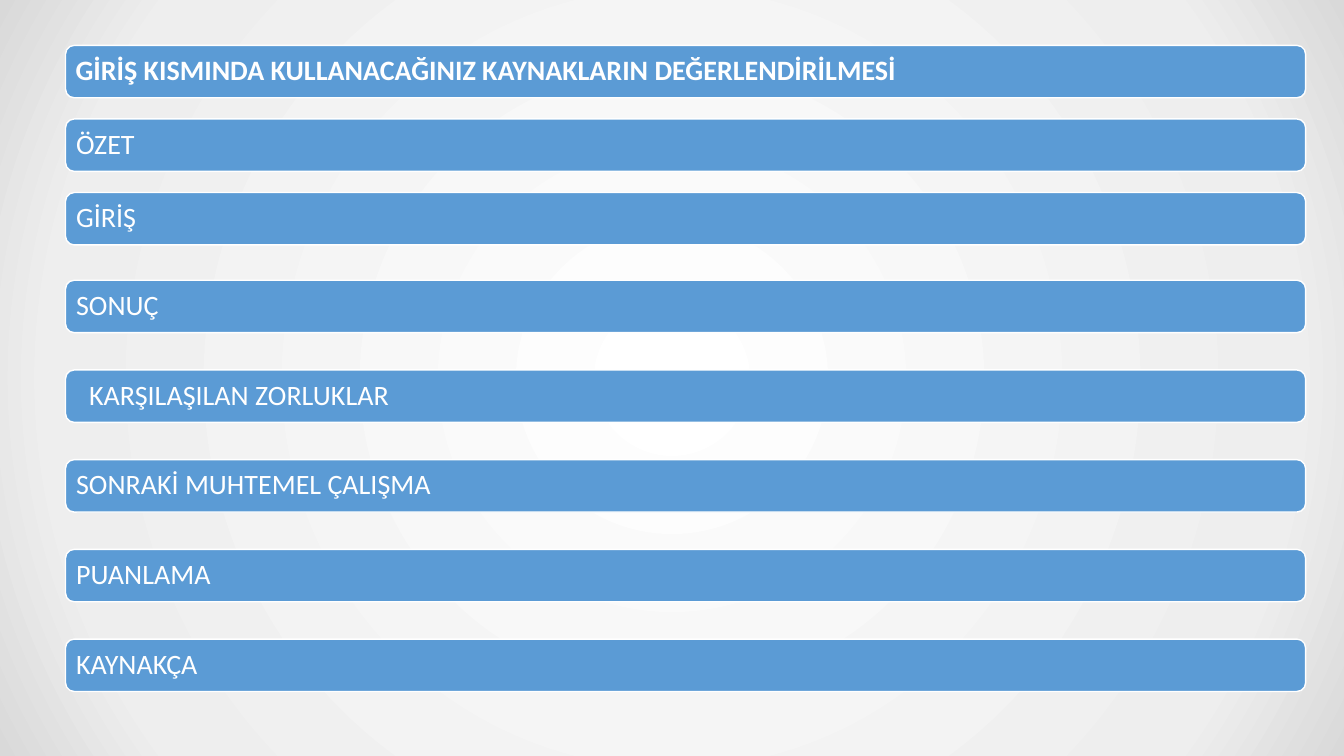
from pptx import Presentation
from pptx.dml.color import RGBColor
from pptx.enum.shapes import MSO_SHAPE as Shape
from pptx.enum.text import MSO_ANCHOR as Anchor, MSO_AUTO_SIZE as AutoSize, PP_ALIGN as Align
from pptx.oxml import parse_xml
from pptx.oxml.ns import nsdecls
from pptx.util import Inches, Pt

HEADING = "GİRİŞ KISMINDA KULLANACAĞINIZ KAYNAKLARIN DEĞERLENDİRİLMESİ"
OPENING_SECTIONS = ["ÖZET", "GİRİŞ"]
CLOSING_SECTIONS = ["SONUÇ", "KARŞILAŞILAN ZORLUKLAR", "SONRAKİ MUHTEMEL ÇALIŞMA",
                    "PUANLAMA", "KAYNAKÇA"]
INDENTED_SECTION = "KARŞILAŞILAN ZORLUKLAR"

TOP, OPENING_STEP = 0.45, 0.73
CLOSING_TOP, CLOSING_STEP = 2.78, 0.89


def colour(value):
    return RGBColor.from_string(value)


class SectionPage:
    FONT, SIZE = "Calibri", 20
    BLUE, WHITE = "5B9BD5", "FFFFFF"
    LEFT, WIDTH, HEIGHT = 0.65, 12.3, 0.52
    INSET, EDGE = 0.08, 0.02

    def __init__(self, deck):
        self.page = deck.slides.add_slide(deck.slide_layouts[5])

    def background(self, stops):
        """Fill the page with a circular gradient of (percent, colour) stops."""
        marks = "".join(f'<a:gs pos="{percent * 1000}"><a:srgbClr val="{value}"/></a:gs>'
                        for percent, value in stops)
        self.page.element.cSld.insert(0, parse_xml(
            f'<p:bg {nsdecls("p", "a")}><p:bgPr><a:gradFill rotWithShape="1">'
            f'<a:gsLst>{marks}</a:gsLst><a:path path="circle">'
            '<a:fillToRect l="50000" t="50000" r="50000" b="50000"/></a:path>'
            '</a:gradFill><a:effectLst/></p:bgPr></p:bg>'))

    def label(self, shape, text, bold=False, indent=0):
        frame = shape.text_frame
        frame.text = text
        frame.word_wrap = True
        frame.auto_size = AutoSize.NONE
        frame.vertical_anchor = Anchor.MIDDLE
        frame.margin_left = Inches(self.INSET + indent)
        frame.margin_top = frame.margin_right = frame.margin_bottom = Inches(self.INSET)
        para = frame.paragraphs[0]
        para.alignment = Align.LEFT
        para.line_spacing = 0.9
        font = para.runs[0].font
        font.name, font.size, font.bold = self.FONT, Pt(self.SIZE), bold
        font.color.rgb = colour(self.WHITE)

    def bar(self, top):
        bar = self.page.shapes.add_shape(Shape.ROUNDED_RECTANGLE, Inches(self.LEFT),
                                         Inches(top), Inches(self.WIDTH), Inches(self.HEIGHT))
        bar.shadow.inherit = False
        bar.fill.solid()
        bar.fill.fore_color.rgb = colour(self.BLUE)
        bar.line.color.rgb = colour(self.WHITE)
        bar.line.width = Pt(1)
        return bar

    def heading(self, text, top):
        """Lay the title placeholder over a bar."""
        bar = self.bar(top)
        title = self.page.shapes.title
        bar.element.addnext(title.element)
        title.left, title.top = Inches(self.LEFT + self.EDGE), Inches(top + self.EDGE)
        title.width = Inches(self.WIDTH - 2 * self.EDGE)
        title.height = Inches(self.HEIGHT - 2 * self.EDGE)
        self.label(title, text, bold=True)

    def section(self, text, top):
        self.label(self.bar(top), text, indent=0.13 if text == INDENTED_SECTION else 0)


def main():
    deck = Presentation()
    deck.slide_width, deck.slide_height = Inches(13.33), Inches(7.5)
    page = SectionPage(deck)
    page.background([(0, "FFFFFF"), (81, "EEEEEE"), (100, "D9D9D9")])
    page.heading(HEADING, TOP)
    for row, text in enumerate(OPENING_SECTIONS, start=1):
        page.section(text, TOP + row * OPENING_STEP)
    for row, text in enumerate(CLOSING_SECTIONS):
        page.section(text, CLOSING_TOP + row * CLOSING_STEP)
    deck.save("out.pptx")


if __name__ == "__main__":
    main()
